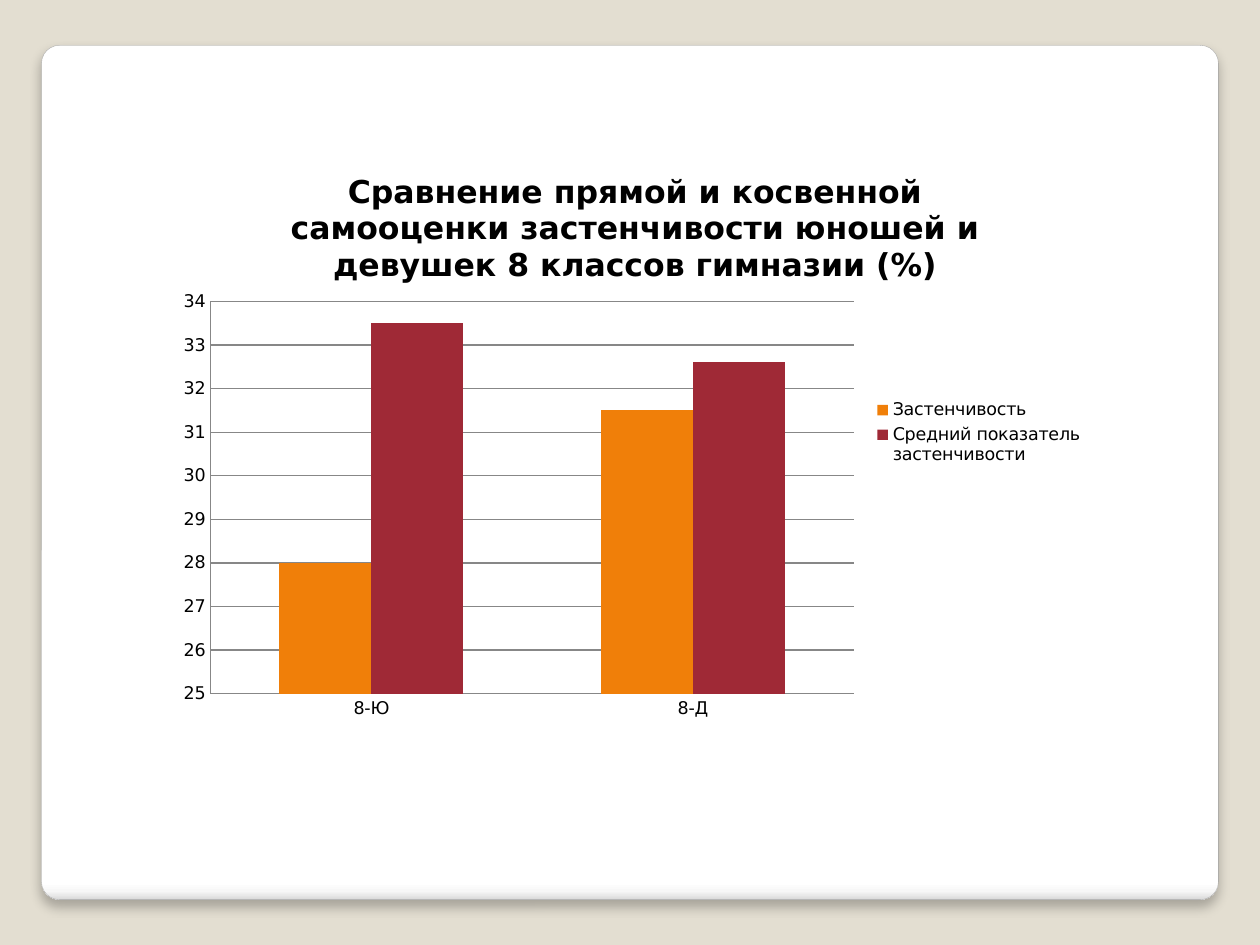
import pptx
import pptx.chart.data
import pptx.dml.color
import pptx.enum.chart
import pptx.enum.shapes
import pptx.enum.text
import pptx.oxml
import pptx.oxml.ns
import pptx.util

RGB = pptx.dml.color.RGBColor
BACKGROUND = RGB(0xE3, 0xDE, 0xD1)
EDGE = RGB(0xA4, 0xA4, 0xA4)
GRID = RGB(0x87, 0x87, 0x87)
BLACK = RGB(0, 0, 0)
ORANGE = RGB(0xF0, 0x7F, 0x09)
CRIMSON = RGB(0x9F, 0x29, 0x36)
FONT = "DejaVu Sans"
NS = pptx.oxml.ns.nsdecls("a", "c")


def write(tf, text, size=10, bold=False, color=BLACK):
    p = tf.paragraphs[0]
    p.alignment = pptx.enum.text.PP_ALIGN.CENTER
    r = p.add_run()
    r.text = text
    r.font.name, r.font.size, r.font.bold = FONT, pptx.util.Pt(size), bold
    r.font.color.rgb = color


def manual_layout(target="", **shares):
    """Layout element with positions as shares of the chart's size."""
    modes = '<c:xMode val="edge"/><c:yMode val="edge"/>'
    values = "".join(f'<c:{k} val="{v}"/>' for k, v in shares.items())
    return pptx.oxml.parse_xml(
        f"<c:layout {NS}><c:manualLayout>{target}{modes}{values}"
        "</c:manualLayout></c:layout>")


prs = pptx.Presentation()
prs.slide_width, prs.slide_height = pptx.util.Inches(10), pptx.util.Inches(7.5)
W, H = prs.slide_width, prs.slide_height
s = prs.slides.add_slide(prs.slide_layouts[6])
s.background.fill.solid()
s.background.fill.fore_color.rgb = BACKGROUND

# White rounded panel with a shaded lower edge and a soft shadow
margin_x, margin_y = int(W * 0.033), int(H * 0.048)
sp = s.shapes.add_shape(
    pptx.enum.shapes.MSO_SHAPE.ROUNDED_RECTANGLE,
    margin_x, margin_y, W - 2 * margin_x, int(H * 0.904))
sp.adjustments[0] = 0.021
sp.line.color.rgb = EDGE
sp.line.width = pptx.util.Pt(0.16)
sp.fill.gradient()
sp.fill.gradient_angle = 270
stops = sp._element.spPr.find(".//" + pptx.oxml.ns.qn("a:gsLst"))
for stop in list(stops):
    stops.remove(stop)
for percent, color in ((0, "FFFFFF"), (98, "FFFFFF"), (99, "F7F7F7"), (100, "DADADA")):
    stops.append(pptx.oxml.parse_xml(
        f'<a:gs {NS} pos="{percent * 1000}"><a:srgbClr val="{color}"/></a:gs>'))
sp.shadow.inherit = False
sp._element.spPr.find(pptx.oxml.ns.qn("a:effectLst")).append(pptx.oxml.parse_xml(
    f'<a:outerShdw {NS} blurRad="{pptx.util.Pt(6)}" dist="{pptx.util.Pt(4)}" '
    'dir="5400000" algn="tl" rotWithShape="0">'
    '<a:srgbClr val="000000"><a:alpha val="25000"/></a:srgbClr></a:outerShdw>'))

# Clustered columns
data = pptx.chart.data.CategoryChartData()
data.categories = ["8-Ю", "8-Д"]
data.add_series("Застенчивость", (28, 31.5))
data.add_series("Средний показатель застенчивости", (33.5, 32.6))
chart = s.shapes.add_chart(
    pptx.enum.chart.XL_CHART_TYPE.COLUMN_CLUSTERED,
    int(W * 0.13), int(H * 0.143), int(W * 0.74), int(H * 0.629), data).chart
chart.font.name, chart.font.size = FONT, pptx.util.Pt(10)
chart.font.color.rgb = BLACK
plot = chart.plots[0]
plot.gap_width, plot.overlap, plot.vary_by_categories = 150, 0, False
for series, color in zip(plot.series, (ORANGE, CRIMSON)):
    series.format.fill.solid()
    series.format.fill.fore_color.rgb = color
    series.format.line.fill.background()

# Axes
values = chart.value_axis
values.minimum_scale, values.maximum_scale, values.major_unit = 25, 34, 1
values.tick_labels.number_format = "General"
values.tick_labels.number_format_is_linked = False
values.has_major_gridlines = True
for axis in (chart.category_axis, values):
    axis.major_tick_mark = axis.minor_tick_mark = pptx.enum.chart.XL_TICK_MARK.NONE
for part in (chart.category_axis, values, values.major_gridlines):
    part.format.line.color.rgb = GRID
    part.format.line.width = pptx.util.Pt(0.75)

# Title and legend
chart.has_title = True
write(chart.chart_title.text_frame,
      "Сравнение прямой и косвенной самооценки застенчивости юношей и "
      "девушек 8 классов гимназии (%)", size=18, bold=True)
chart.has_legend = True
chart.legend.position = pptx.enum.chart.XL_LEGEND_POSITION.RIGHT
chart.legend.include_in_layout = False

# Placement inside the chart
title = chart.chart_title._element
plot_area = chart._chartSpace.chart.plotArea
for old in title.findall(pptx.oxml.ns.qn("c:layout")):
    title.remove(old)
title.find(pptx.oxml.ns.qn("c:tx")).addnext(manual_layout(x=0.13, y=0.05))
for old in plot_area.findall(pptx.oxml.ns.qn("c:layout")):
    plot_area.remove(old)
plot_area.insert(0, manual_layout(
    '<c:layoutTarget val="inner"/>', x=0.05, y=0.28, w=0.69, h=0.66))

prs.save("out.pptx")
